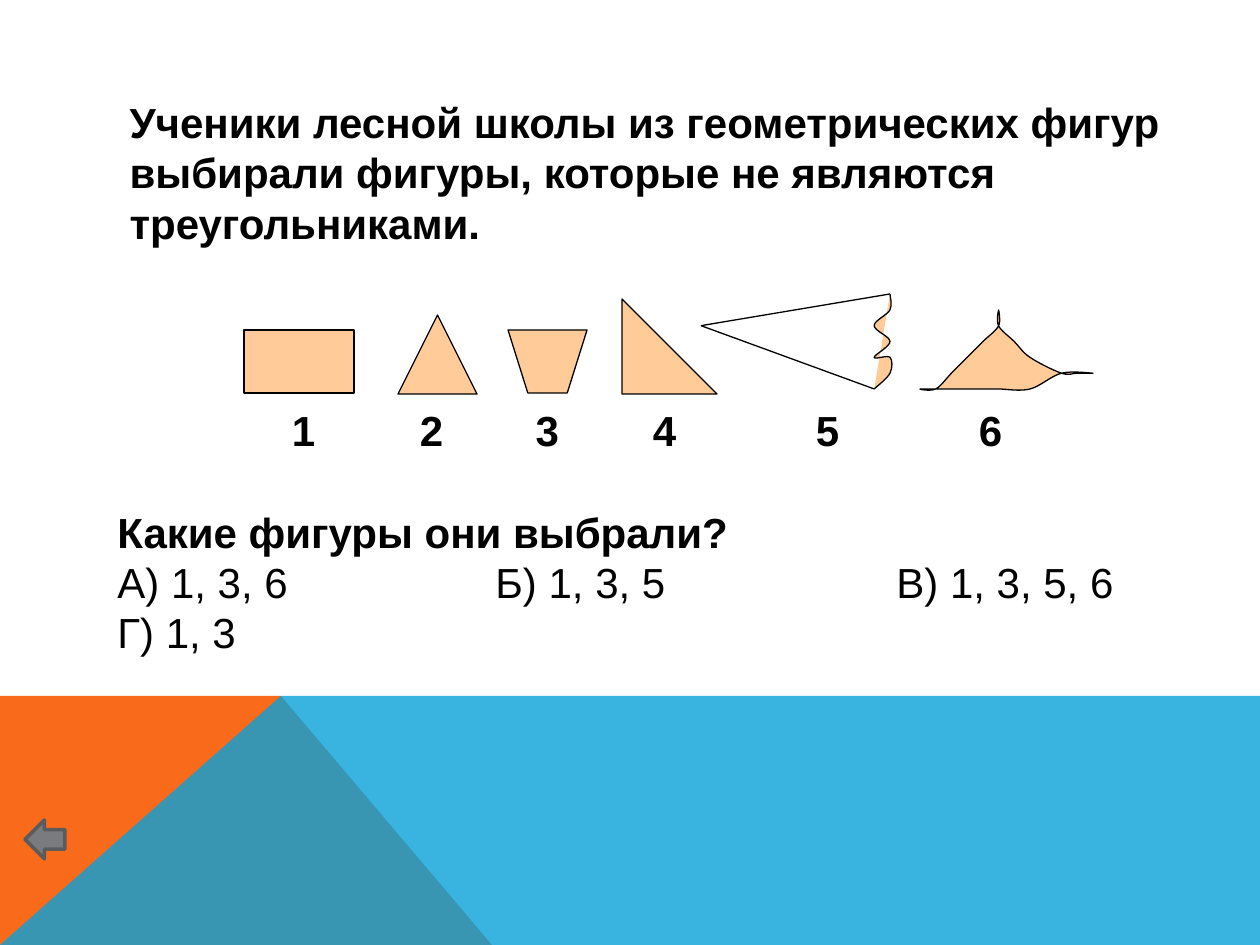
from lxml.etree import SubElement
from pptx import Presentation
from pptx.dml.color import RGBColor
from pptx.enum.shapes import MSO_CONNECTOR as Connector, MSO_SHAPE as Shape
from pptx.enum.text import MSO_ANCHOR as Anchor, MSO_AUTO_SIZE as AutoSize, PP_ALIGN as Align
from pptx.oxml.ns import qn
from pptx.util import Pt

EMU_PER_PX = 914400 / 126
BLACK = RGBColor(0x00, 0x00, 0x00)
PEACH = RGBColor(0xFF, 0xCC, 0x99)
ORANGE = RGBColor(0xF9, 0x6A, 0x1B)
BLUE = RGBColor(0x08, 0xA1, 0xD9)
GRAY = RGBColor(0x79, 0x7B, 0x7E)
DARK_GRAY = RGBColor(0x5A, 0x5B, 0x5D)

TORN_EDGE = [(12, 0), (12, 1), (11, 2), (12, 3), (11, 4), (12, 4), (12, 5), (11, 6)]
HILL = [(0, 5), (1, 5), (2, 4), (3, 3), (4, 2), (5, 1), (5, 0), (5, 1), (6, 2), (7, 3),
        (9, 4), (10, 4), (11, 4), (9, 4), (7, 5), (5, 5), (4, 5), (3, 5), (2, 5)]
LABEL_CENTERS = [186, 314, 430, 547, 710, 873]
ANSWER_STARTS = [378, 779]


def px(length):
    return round(length * EMU_PER_PX)


def paint(shape, fill, line=None, width=0.75):
    shape.shadow.inherit = False
    shape.fill.solid()
    shape.fill.fore_color.rgb = fill
    if line is None:
        shape.line.fill.background()
    else:
        shape.line.color.rgb = line
        shape.line.width = Pt(width)
    return shape


def add_preset(shapes, kind, box, fill=PEACH, line=BLACK, width=0.75):
    return paint(shapes.add_shape(kind, *map(px, box)), fill, line, width)


def add_outline(shapes, points, fill=PEACH, line=BLACK, close=True):
    start, *rest = [(px(x), px(y)) for x, y in points]
    builder = shapes.build_freeform(*start, scale=1.0)
    builder.add_line_segments(rest, close=close)
    return paint(builder.convert_to_shape(), fill, line)


def on_grid(box, columns, rows, nodes):
    left, top, width, height = box
    return [(left + width * column / columns, top + height * row / rows) for column, row in nodes]


def add_curve(shapes, nodes, close):
    points = nodes + nodes[:1] if close else nodes
    outline = add_outline(shapes, points, close=close)
    left, top = min(x for x, _ in nodes), min(y for _, y in nodes)
    local = [(x - left, y - top) for x, y in points]
    first, last = (local[-2], local[1]) if close else (local[0], local[-1])
    chain = [first, *local, last]
    segments = outline._element.spPr.iter(qn("a:lnTo"))
    for segment, before, start, end, after in zip(list(segments), chain, chain[1:], chain[2:], chain[3:]):
        leave = [s + (e - b) / 6 for b, s, e in zip(before, start, end)]
        arrive = [e - (a - s) / 6 for s, e, a in zip(start, end, after)]
        bezier = segment.makeelement(qn("a:cubicBezTo"))
        for x, y in (leave, arrive, end):
            SubElement(bezier, qn("a:pt"), x=str(px(x)), y=str(px(y)))
        segment.getparent().replace(segment, bezier)


def add_edge(shapes, start, end):
    edge = shapes.add_connector(Connector.STRAIGHT, *map(px, (*start, *end)))
    edge.line.color.rgb = BLACK
    edge.line.width = Pt(0.75)
    SubElement(edge._element.spPr, qn("a:effectLst"))


def set_tabs(paragraph, stops, alignment):
    properties = paragraph._p.get_or_add_pPr()
    tab_list = SubElement(properties, qn("a:tabLst"))
    for stop in stops:
        SubElement(tab_list, qn("a:tab"), pos=str(px(stop)), algn=alignment)


def format_text(paragraph, bold):
    paragraph.alignment = Align.LEFT
    font = paragraph.font
    font.name, font.size, font.bold = "Arial", Pt(24), bold
    font.color.rgb = BLACK


def set_frame(frame, bottom_margin):
    frame.word_wrap = True
    frame.auto_size = AutoSize.NONE
    frame.vertical_anchor = Anchor.MIDDLE
    frame.margin_bottom = px(bottom_margin)


def add_backdrop(shapes, box):
    left, top, width, height = box
    right, bottom, peak = left + width, top + height, left + 281
    add_outline(shapes, [(left, bottom), (left, top), (peak, top), (left + 492, bottom)], ORANGE, None)
    water = add_outline(shapes, [(left, bottom), (peak, top), (right, top), (right, bottom)], BLUE, None)
    color = water._element.spPr.find(qn("a:solidFill")).find(qn("a:srgbClr"))
    SubElement(color, qn("a:alpha"), val="80000")


def add_torn_triangle(shapes, box):
    tip, upper, lower = on_grid(box, 12, 6, [(0, 2), (12, 0), (11, 6)])
    parts = shapes.add_group_shape().shapes
    add_edge(parts, lower, tip)
    add_edge(parts, upper, tip)
    add_curve(parts, on_grid(box, 12, 6, TORN_EDGE), False)


def add_figures(shapes, box):
    left, top, _, _ = box
    add_preset(shapes, Shape.RECTANGLE, (left, top + 36, 110, 63))
    add_preset(shapes, Shape.ISOSCELES_TRIANGLE, (left + 154, top + 21, 79, 79))
    trapezoid = (left + 264, top + 36, 79, 63)
    add_outline(shapes, on_grid(trapezoid, 4, 1, [(0, 0), (1, 1), (3, 1), (4, 0)]))
    add_preset(shapes, Shape.RIGHT_TRIANGLE, (left + 378, top + 5, 95, 95))
    add_torn_triangle(shapes, (left + 457, top, 189, 95))
    hill = (left + 676, top + 16, 173, 79)
    add_curve(shapes, on_grid(hill, 11, 5, HILL), True)


def add_task(title, box):
    title.left, title.top, title.width, title.height = map(px, box)
    frame = title.text_frame
    frame.text = ("Ученики лесной школы из геометрических фигур выбирали фигуры, "
                  "которые не являются треугольниками.")
    set_frame(frame, 44)
    format_text(frame.paragraphs[0], True)


def add_question(shapes, box):
    frame = shapes.add_textbox(*map(px, box)).text_frame
    frame.text = "\n".join([
        "\t1\t2\t3\t4\t5\t6",
        "Какие фигуры они выбрали?",
        "А) 1, 3, 6\tБ) 1, 3, 5\tВ) 1, 3, 5, 6",
        "Г) 1, 3",
    ])
    set_frame(frame, 56)
    labels, question, answers, last_answer = frame.paragraphs
    question.space_before = Pt(29)
    set_tabs(labels, LABEL_CENTERS, "ctr")
    set_tabs(answers, ANSWER_STARTS, "l")
    for paragraph in (labels, question):
        format_text(paragraph, True)
    for paragraph in (answers, last_answer):
        format_text(paragraph, False)


def main():
    deck = Presentation()
    deck.slide_width, deck.slide_height = px(1260), px(945)
    slide = deck.slides.add_slide(deck.slide_layouts[5])
    shapes = slide.shapes
    add_backdrop(shapes, (0, 696, 1260, 249))
    add_figures(shapes, (244, 294, 849, 100))
    add_task(shapes.title, (117, 89, 1106, 204))
    add_question(shapes, (105, 397, 1067, 318))
    add_preset(shapes, Shape.LEFT_ARROW, (25, 820, 40, 39), GRAY, DARK_GRAY, 2)
    deck.save("out.pptx")


if __name__ == "__main__":
    main()
